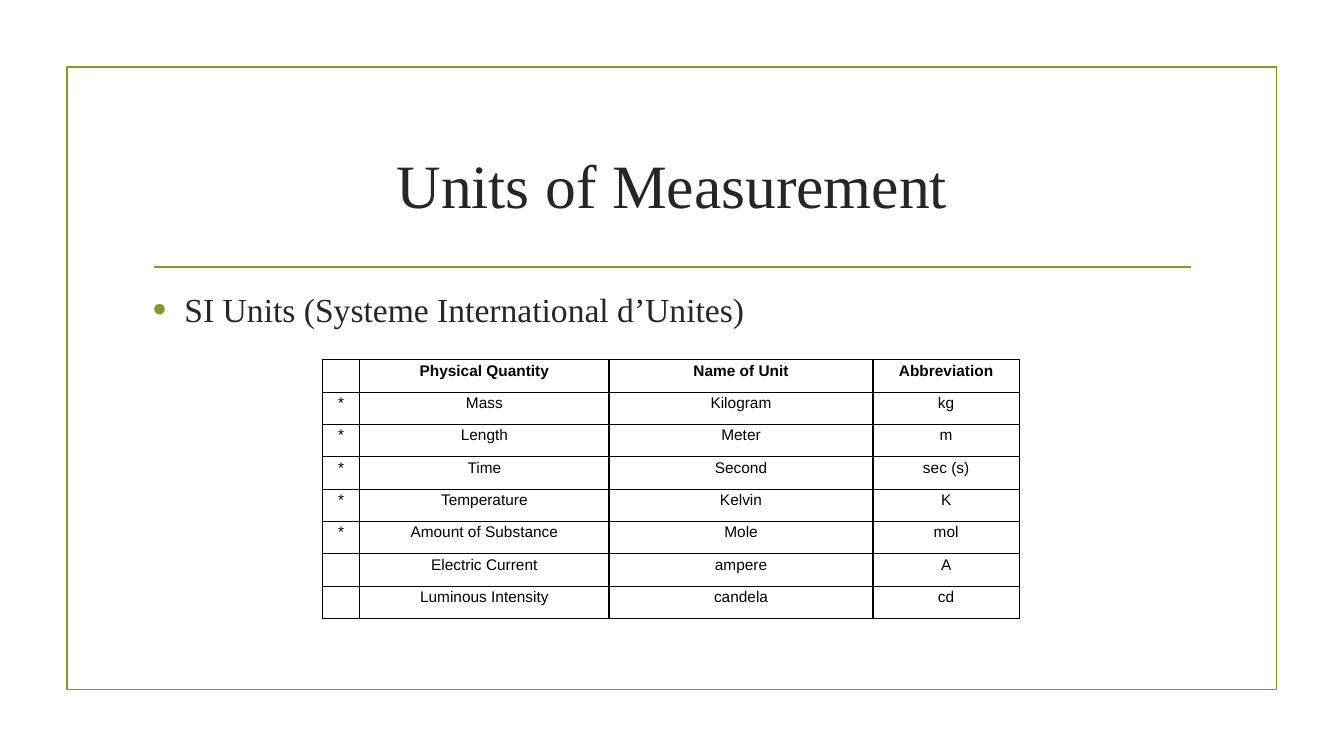
import pptx
import pptx.dml.color
import pptx.enum.shapes
import pptx.enum.text
import pptx.oxml
import pptx.oxml.ns
import pptx.util

Pt = pptx.util.Pt
PP_ALIGN = pptx.enum.text.PP_ALIGN
ANCHOR = pptx.enum.text.MSO_ANCHOR
GREEN, INK, BLACK = "83992A", "262626", "000000"
SERIF, SANS = "Times New Roman", "Arial"
COLUMN_WIDTHS = (26.64, 178.04, 188.6, 104.4)
UNITS = (
    ("", "Physical Quantity", "Name of Unit", "Abbreviation"),
    ("*", "Mass", "Kilogram", "kg"),
    ("*", "Length", "Meter", "m"),
    ("*", "Time", "Second", "sec (s)"),
    ("*", "Temperature", "Kelvin", "K"),
    ("*", "Amount of Substance", "Mole", "mol"),
    ("", "Electric Current", "ampere", "A"),
    ("", "Luminous Intensity", "candela", "cd"),
)


def rgb(value):
    """Return the colour for a hex string."""
    return pptx.dml.color.RGBColor.from_string(value)


def add_xml(parent, markup):
    """Append DrawingML elements to a parent element."""
    namespace = pptx.oxml.ns.nsdecls("a")
    for child in pptx.oxml.parse_xml(f"<a:list {namespace}>{markup}</a:list>"):
        parent.append(child)


def write(frame, text, size, font, colour, align=PP_ALIGN.LEFT, bold=False, spacing=None):
    """Write one formatted paragraph into a text frame."""
    paragraph = frame.paragraphs[0]
    paragraph.alignment = align
    paragraph.line_spacing = spacing
    run = paragraph.add_run()
    run.text = text
    run.font.size = Pt(size)
    run.font.name = font
    run.font.bold = bold
    run.font.color.rgb = rgb(colour)
    return paragraph


def add_frame(slide, left, top, width, height):
    """Draw the green border and the rule under the title."""
    border = slide.shapes.add_shape(
        pptx.enum.shapes.MSO_SHAPE.RECTANGLE, Pt(left), Pt(top), Pt(width), Pt(height))
    border.shadow.inherit = False
    border.fill.background()
    rule_y, inset = Pt(top + 142.6), 62.3
    rule = slide.shapes.add_connector(
        pptx.enum.shapes.MSO_CONNECTOR.STRAIGHT,
        Pt(left + inset), rule_y, Pt(left + width - inset + 0.9), rule_y)
    add_xml(rule._element.spPr, "<a:effectLst/>")
    for outline in (border.line, rule.line):
        outline.color.rgb = rgb(GREEN)
        outline.width = Pt(1.25)


def add_title(slide, left, top, width, height):
    """Place the title placeholder in its box."""
    title = slide.shapes.title
    title.left, title.top, title.width, title.height = map(Pt, (left, top, width, height))
    title.text_frame.auto_size = pptx.enum.text.MSO_AUTO_SIZE.NONE
    title.text_frame.vertical_anchor = ANCHOR.MIDDLE
    write(title.text_frame, "Units of Measurement", 44, SERIF, INK, PP_ALIGN.CENTER)


def add_body(slide, left, top, width, height):
    """Place the bulleted line above the table."""
    body = slide.shapes.add_textbox(Pt(left), Pt(top), Pt(width), Pt(height)).text_frame
    body.word_wrap = True
    paragraph = write(body, "SI Units (Systeme International d’Unites)", 24, SERIF, INK)
    paragraph.space_after = Pt(6)
    properties = paragraph._p.get_or_add_pPr()
    properties.set("marL", str(Pt(22.5)))
    properties.set("indent", str(Pt(-22.5)))
    add_xml(properties, f'<a:buClr><a:srgbClr val="{GREEN}"/></a:buClr>'
            f'<a:buSzPct val="115000"/><a:buFont typeface="{SANS}"/><a:buChar char="•"/>')


def format_cell(cell, text, bold):
    """Fill one table cell and draw its borders."""
    cell.margin_left = cell.margin_right = Pt(5)
    cell.margin_top = cell.margin_bottom = 0
    cell.vertical_anchor = ANCHOR.TOP
    if text:
        write(cell.text_frame, text, 11, SANS, BLACK, PP_ALIGN.CENTER, bold, 1.15)
    for side in ("lnL", "lnR", "lnT", "lnB"):
        add_xml(cell._tc.get_or_add_tcPr(),
                f'<a:{side} w="{Pt(1)}"><a:solidFill><a:srgbClr val="{BLACK}"/>'
                f'</a:solidFill></a:{side}>')
    cell.fill.background()


def add_units_table(slide, left, top, height):
    """Build the table of SI units."""
    table = slide.shapes.add_table(
        len(UNITS), len(COLUMN_WIDTHS), Pt(left), Pt(top),
        Pt(sum(COLUMN_WIDTHS)), Pt(height)).table
    table.horz_banding = False
    for column, width in zip(table.columns, COLUMN_WIDTHS):
        column.width = Pt(width)
    for index, unit in enumerate(UNITS):
        table.rows[index].height = Pt(height / len(UNITS))
        for cell, text in zip(table.rows[index].cells, unit):
            format_cell(cell, text, index == 0)


def main():
    """Build and save the slide."""
    deck = pptx.Presentation()
    deck.slide_width, deck.slide_height = Pt(960), Pt(540)
    slide = deck.slides.add_slide(deck.slide_layouts[5])
    add_frame(slide, 47.8, 48, 864, 444.5)
    add_title(slide, 102.2, 77, 756, 108)
    add_body(slide, 102.2, 202.6, 756, 261)
    add_units_table(slide, 230.4, 257, 185.04)
    deck.save("out.pptx")


if __name__ == "__main__":
    main()
